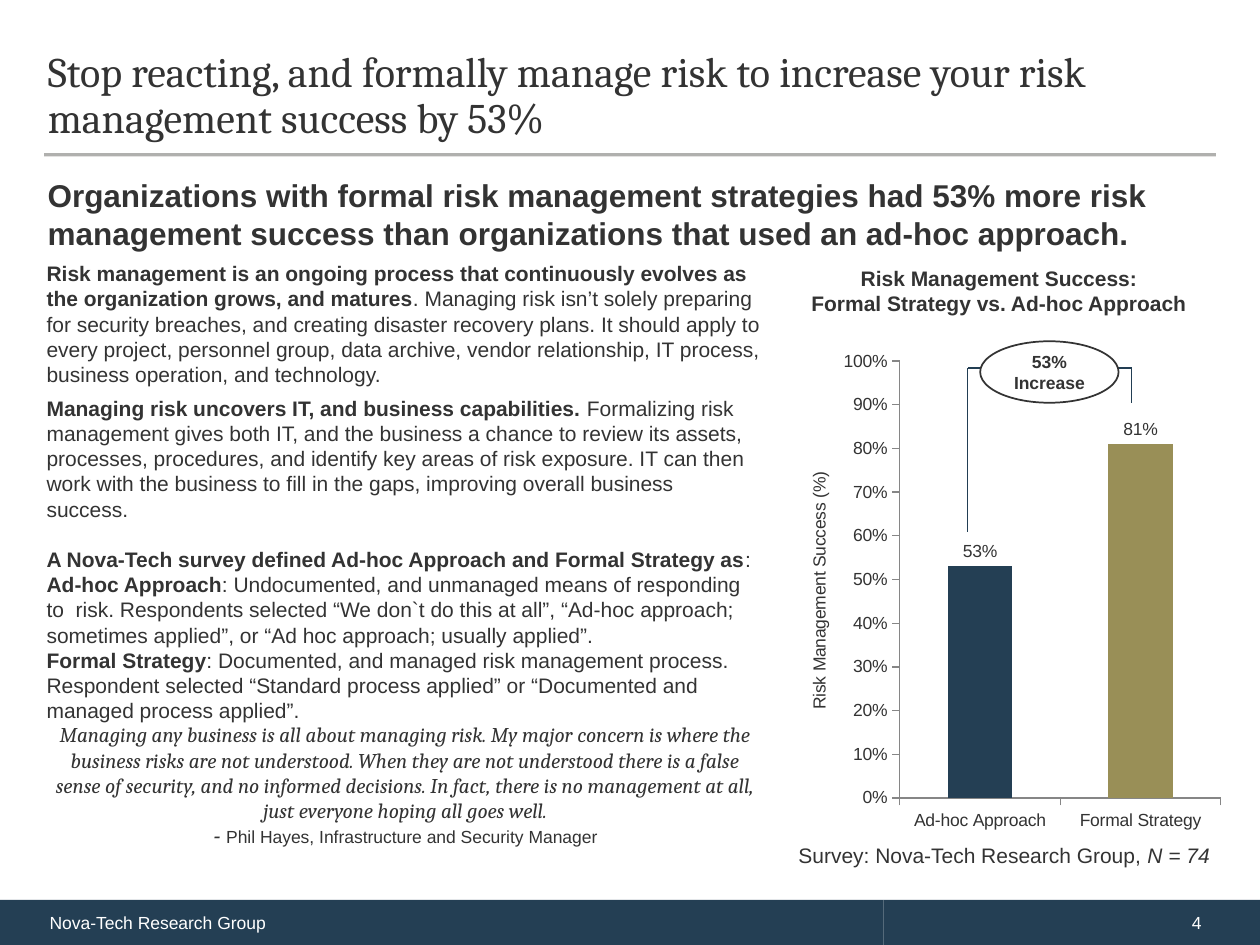
from dataclasses import dataclass

import lxml.etree
import pptx
import pptx.chart.data
import pptx.dml.color
import pptx.enum.chart
import pptx.enum.shapes
import pptx.enum.text
import pptx.oxml
import pptx.oxml.ns
import pptx.util

Cm, Pt = pptx.util.Cm, pptx.util.Pt
ALIGN = pptx.enum.text.PP_ALIGN
ANCHOR = pptx.enum.text.MSO_ANCHOR
SHAPE = pptx.enum.shapes.MSO_SHAPE
CHART = pptx.enum.chart
qn = pptx.oxml.ns.qn


@dataclass(frozen=True)
class Theme:
    ink: str = "333333"
    navy: str = "243F54"
    olive: str = "998F57"
    white: str = "FFFFFF"
    rule: str = "45433E"
    bracket: str = "223E53"
    axis: str = "868686"
    sans: str = "Arial"
    serif: str = "Cambria"
    title: float = 24
    heading: float = 18
    body: float = 12
    small: float = 10


def rgb(value):
    return pptx.dml.color.RGBColor.from_string(value)


def assign(target, values):
    for name, value in values.items():
        setattr(target, name, value)


class SlideBuilder:
    def __init__(self, slide, theme):
        self.slide, self.theme = slide, theme

    def style_font(self, font, **values):
        theme = self.theme
        values = {"name": theme.sans, "size": theme.body, "color": theme.ink} | values
        font.color.rgb = rgb(values.pop("color"))
        values["size"] = Pt(values["size"])
        assign(font, values)

    def fill_frame(self, frame, paragraphs, frame_format=None, **font):
        """Each paragraph is (format, runs); each run is (text, font values)."""
        assign(frame, {"word_wrap": True, "auto_size": pptx.enum.text.MSO_AUTO_SIZE.NONE}
               | (frame_format or {}))
        for index, (para_format, runs) in enumerate(paragraphs):
            para = frame.paragraphs[0] if index == 0 else frame.add_paragraph()
            assign(para, {"alignment": ALIGN.LEFT} | para_format)
            for text, values in runs:
                span = para.add_run()
                span.text = text
                self.style_font(span.font, **(font | values))

    def title(self, text, place):
        box = self.slide.shapes.title
        assign(box, dict(zip(("left", "top", "width", "height"), map(Cm, place))))
        self.fill_frame(box.text_frame, [({"line_spacing": Pt(26)}, [(text, {})])],
                        {"vertical_anchor": ANCHOR.MIDDLE},
                        name=self.theme.serif, size=self.theme.title)

    def text(self, place, paragraphs, frame_format=None, **font):
        box = self.slide.shapes.add_textbox(*map(Cm, place))
        self.fill_frame(box.text_frame, paragraphs, frame_format, **font)

    def shape(self, kind, place, fill, paragraphs, line=None, frame_format=None, **font):
        box = self.slide.shapes.add_shape(kind, *map(Cm, place))
        box.shadow.inherit = False
        box.fill.solid()
        box.fill.fore_color.rgb = rgb(fill)
        if line:
            box.line.color.rgb = rgb(line)
            box.line.width = Pt(1)
        else:
            box.line.fill.background()
        self.fill_frame(box.text_frame, paragraphs,
                        {"vertical_anchor": ANCHOR.MIDDLE} | (frame_format or {}), **font)

    def line(self, start, end, color, width, opacity=None):
        line = self.slide.shapes.add_connector(
            pptx.enum.shapes.MSO_CONNECTOR.STRAIGHT, *map(Cm, start + end))
        line.line.color.rgb = rgb(color)
        line.line.width = Pt(width)
        properties = line._element.spPr
        if opacity:
            shade = properties.find(".//" + qn("a:srgbClr"))
            lxml.etree.SubElement(shade, qn("a:alpha")).set("val", str(opacity * 1000))
        lxml.etree.SubElement(properties, qn("a:effectLst"))

    def column_chart(self, place, columns, axis_title, plot_area):
        """columns holds (category, value, color); plot_area is x, y, w, h as fractions."""
        data = pptx.chart.data.CategoryChartData(number_format="0%")
        data.categories = [name for name, _, _ in columns]
        data.add_series("Series 1", [value for _, value, _ in columns])
        chart = self.slide.shapes.add_chart(
            CHART.XL_CHART_TYPE.COLUMN_CLUSTERED, *map(Cm, place), data).chart
        assign(chart, {"has_title": False, "has_legend": False})
        self.style_font(chart.font, size=self.theme.small)

        # Columns and their labels
        plot = chart.plots[0]
        assign(plot, {"gap_width": 150, "vary_by_categories": False, "has_data_labels": True})
        assign(plot.data_labels, {
            "show_value": True, "number_format": "0%", "number_format_is_linked": False,
            "position": CHART.XL_LABEL_POSITION.OUTSIDE_END})
        for index, (_, _, color) in enumerate(columns):
            fill = plot.series[0].points[index].format.fill
            fill.solid()
            fill.fore_color.rgb = rgb(color)

        # Axes
        for axis in (chart.category_axis, chart.value_axis):
            assign(axis, {"has_major_gridlines": False,
                          "major_tick_mark": CHART.XL_TICK_MARK.OUTSIDE})
            axis.format.line.color.rgb = rgb(self.theme.axis)
        assign(chart.value_axis, {"minimum_scale": 0, "maximum_scale": 1, "major_unit": 0.1})
        assign(chart.value_axis.tick_labels,
               {"number_format": "0%", "number_format_is_linked": False})
        span = chart.value_axis.axis_title.text_frame.paragraphs[0].add_run()
        span.text = axis_title
        self.style_font(span.font, size=self.theme.small, bold=False)

        # Fixed inner plot area
        area = chart._chartSpace.chart.plotArea
        for old in area.findall(qn("c:layout")):
            area.remove(old)
        layout = lxml.etree.Element(qn("c:layout"))
        manual = lxml.etree.SubElement(layout, qn("c:manualLayout"))
        settings = [("layoutTarget", "inner"), ("xMode", "edge"), ("yMode", "edge")]
        for tag, value in settings + list(zip("xywh", plot_area)):
            lxml.etree.SubElement(manual, qn("c:" + tag)).set("val", str(value))
        area.insert(0, layout)


def main():
    theme = Theme()
    deck = pptx.Presentation()
    deck.slide_width, deck.slide_height = Cm(25.4), Cm(19.05)
    page = SlideBuilder(deck.slides.add_slide(deck.slide_layouts[5]), theme)
    bold, centred = {"bold": True}, {"alignment": ALIGN.CENTER}
    company = "Nova-Tech Research Group"

    # Footer band
    for left, width, inset, text in ((0, 17.81, 1, company), (17.81, 7.59, 6.22, "4")):
        page.shape(SHAPE.RECTANGLE, (left, 18.14, width, 0.91), theme.navy,
                   [({}, [(text, {})])], frame_format={"margin_left": Cm(inset)},
                   size=theme.small, color=theme.white)

    # Title, rule and heading
    page.line((0.89, 3.12), (24.51, 3.12), theme.rule, 1.75, opacity=42)
    page.title("Stop reacting, and formally manage risk to increase your risk "
               "management success by 53%", (0.71, 0.74, 23.95, 2.39))
    page.text((0.71, 3.43, 23.95, 1.8), [({"space_before": Pt(3.6)}, [(
        "Organizations with formal risk management strategies had 53% more risk "
        "management success than organizations that used an ad-hoc approach.", bold)])],
        size=theme.heading)

    # Explanation: space before, bold lead-in, remainder
    explanation = (
        (5, "Risk management is an ongoing process that continuously evolves as the "
            "organization grows, and matures",
         ". Managing risk isn’t solely preparing for security breaches, and creating "
         "disaster recovery plans. It should apply to every project, personnel group, data "
         "archive, vendor relationship, IT process, business operation, and technology."),
        (5, "Managing risk uncovers IT, and business capabilities.",
         " Formalizing risk management gives both IT, and the business a chance to review "
         "its assets, processes, procedures, and identify key areas of risk exposure. IT can "
         "then work with the business to fill in the gaps, improving overall business success."),
        (14.4, "A Nova-Tech survey defined Ad-hoc Approach and Formal Strategy as", ":"),
        (0, "Ad-hoc Approach",
         ": Undocumented, and unmanaged means of responding to  risk. Respondents selected "
         "“We don`t do this at all”, “Ad-hoc approach; sometimes applied”, or “Ad hoc "
         "approach; usually applied”."),
        (0, "Formal Strategy",
         ": Documented, and managed risk management process. Respondent selected “Standard "
         "process applied” or “Documented and managed process applied”."),
    )
    page.text((0.69, 5.13, 14.91, 8.79), [
        ({"space_before": Pt(gap)}, [(lead, bold), (rest, {})])
        for gap, lead, rest in explanation])

    # Quotation
    page.text((0.74, 14.43, 14.86, 2.82), [
        (centred, [("Managing any business is all about managing risk. My major concern is "
                    "where the business risks are not understood. When they are not understood "
                    "there is a false sense of security, and no informed decisions. In fact, "
                    "there is no management at all, just everyone hoping all goes well.",
                    {"name": theme.serif, "italic": True})]),
        (centred, [("- ", {"italic": True}),
                   ("Phil Hayes, Infrastructure and Security Manager", {"size": theme.small})])])

    # Chart with its heading and source
    page.text((16.03, 16.87, 8.61, 0.76), [({"alignment": ALIGN.RIGHT}, [
        (f"Survey: {company}, ", {}), ("N = 74", {"italic": True})])], {"word_wrap": False})
    page.text((15.39, 5.23, 9.5, 1.27), [
        (centred, [(text, bold)]) for text in
        ("Risk Management Success:", "Formal Strategy vs. Ad-hoc Approach")])
    page.column_chart((15.8, 6.88, 8.99, 10.01),
                      (("Ad-hoc Approach", 0.53, theme.navy),
                       ("Formal Strategy", 0.81, theme.olive)),
                      "Risk Management Success (%)", (0.26, 0.04, 0.72, 0.88))

    # Bracket between the columns and its callout
    corners = ((19.51, 10.72), (19.51, 7.42), (22.81, 7.42), (22.81, 8.13))
    for start, end in zip(corners, corners[1:]):
        page.line(start, end, theme.bracket, 0.75)
    page.shape(SHAPE.OVAL, (19.76, 6.88, 2.79, 1.24), theme.white,
               [(centred, [("53% Increase", bold)])], line=theme.ink, size=theme.small)

    deck.save("out.pptx")


if __name__ == "__main__":
    main()
